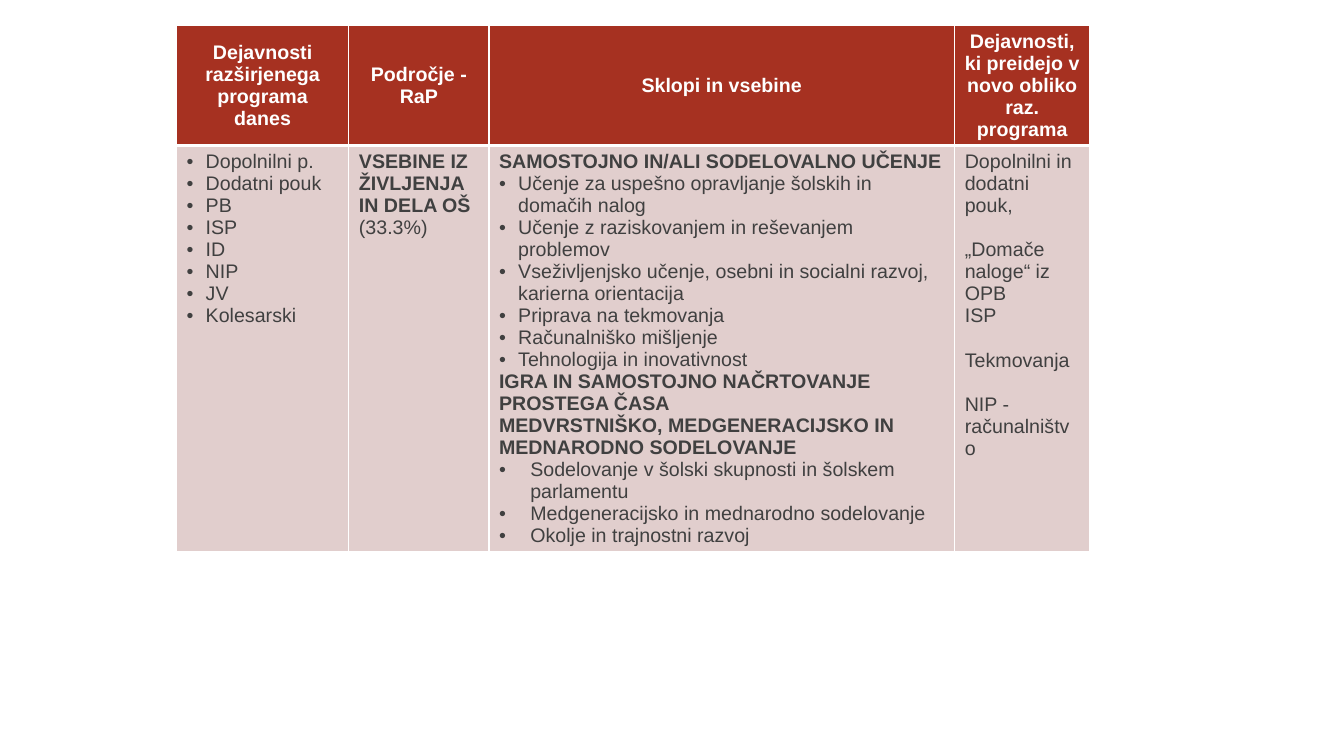
"""Build a slide with a table of extended school programme activities."""
from dataclasses import dataclass

from lxml import etree
from pptx import Presentation
from pptx.dml.color import RGBColor
from pptx.enum.text import MSO_ANCHOR, PP_ALIGN
from pptx.oxml.ns import qn
from pptx.util import Pt

CENTER, LEFT = PP_ALIGN.CENTER, PP_ALIGN.LEFT
MIDDLE, TOP = MSO_ANCHOR.MIDDLE, MSO_ANCHOR.TOP
EMU_PER_PX = 9144
SLIDE_SIZE = (1333, 750)
TABLE_ORIGIN = (175, 25)
COLUMN_WIDTHS = (171, 139, 462, 134)
ROW_HEIGHTS = (119, 402)
FONT_NAME, FONT_SIZE = "Arial", 14
GROUP_GAP = 16
THIN, THICK = 1, 3
COLORS = {"header": "A63121", "body": "E1CECD", "text": "404040", "white": "FFFFFF"}


@dataclass(frozen=True)
class Line:
    text: str
    bold: bool = False
    indent: int = 0
    gap: int = 0


@dataclass(frozen=True)
class RowStyle:
    fill: str
    color: str
    alignment: PP_ALIGN
    anchor: MSO_ANCHOR
    top_border: int
    bottom_border: int


HEADER_STYLE = RowStyle("header", "white", CENTER, MIDDLE, THIN, THICK)
BODY_STYLE = RowStyle("body", "text", LEFT, TOP, THICK, THIN)


def px(length: int) -> int:
    """Turn px into EMU."""
    return length * EMU_PER_PX


def bullets(indent: int, *texts: str) -> list[Line]:
    """Make bulleted lines that share one hanging indent."""
    return [Line(text, indent=indent) for text in texts]


HEADERS = [
    [Line(text, bold=True)]
    for text in (
        "Dejavnosti razširjenega programa danes",
        "Področje - RaP",
        "Sklopi in vsebine",
        "Dejavnosti, ki preidejo v novo obliko raz. programa",
    )
]
BODY = [
    bullets(19, "Dopolnilni p.", "Dodatni pouk", "PB", "ISP", "ID", "NIP", "JV", "Kolesarski"),
    [Line("VSEBINE IZ ŽIVLJENJA IN DELA OŠ", bold=True), Line("(33.3%)")],
    [
        Line("SAMOSTOJNO IN/ALI SODELOVALNO UČENJE", bold=True),
        *bullets(
            19,
            "Učenje za uspešno opravljanje šolskih in domačih nalog",
            "Učenje z raziskovanjem in reševanjem problemov",
            "Vseživljenjsko učenje, osebni in socialni razvoj, karierna orientacija",
            "Priprava na tekmovanja",
            "Računalniško mišljenje",
            "Tehnologija in inovativnost",
        ),
        Line("IGRA IN SAMOSTOJNO NAČRTOVANJE PROSTEGA ČASA", bold=True),
        Line("MEDVRSTNIŠKO, MEDGENERACIJSKO IN MEDNARODNO SODELOVANJE", bold=True),
        *bullets(
            31,
            "Sodelovanje v šolski skupnosti in šolskem parlamentu",
            "Medgeneracijsko in mednarodno sodelovanje",
            "Okolje in trajnostni razvoj",
        ),
    ],
    [
        Line("Dopolnilni in dodatni pouk,"),
        Line("„Domače naloge“ iz OPB", gap=GROUP_GAP),
        Line("ISP"),
        Line("Tekmovanja", gap=GROUP_GAP),
        Line("NIP - računalništvo", gap=GROUP_GAP),
    ],
]


def add_bullet(paragraph, indent: int) -> None:
    """Give a paragraph a round bullet with a hanging indent."""
    properties = paragraph._p.get_or_add_pPr()
    properties.set("marL", str(px(indent)))
    properties.set("indent", str(-px(indent)))
    etree.SubElement(properties, qn("a:buFont"), typeface=FONT_NAME)
    etree.SubElement(properties, qn("a:buChar"), char="•")


def add_borders(cell, style: RowStyle) -> None:
    """Draw white borders on the four sides of a cell."""
    properties = cell._tc.get_or_add_tcPr()
    widths = {"lnL": THIN, "lnR": THIN, "lnT": style.top_border, "lnB": style.bottom_border}
    for side, width in widths.items():
        border = etree.SubElement(properties, qn(f"a:{side}"), w=str(int(Pt(width))))
        fill = etree.SubElement(border, qn("a:solidFill"))
        etree.SubElement(fill, qn("a:srgbClr"), val=COLORS["white"])


def write_line(paragraph, line: Line, style: RowStyle) -> None:
    """Write and format one paragraph."""
    paragraph.text = line.text
    paragraph.alignment = style.alignment
    if line.gap:
        paragraph.space_before = Pt(line.gap)
    if line.indent:
        add_bullet(paragraph, line.indent)
    font = paragraph.font
    font.name, font.size, font.bold = FONT_NAME, Pt(FONT_SIZE), line.bold
    font.color.rgb = RGBColor.from_string(COLORS[style.color])


def fill_cell(cell, lines: list[Line], style: RowStyle) -> None:
    """Format a cell and write its lines."""
    add_borders(cell, style)
    cell.fill.solid()
    cell.fill.fore_color.rgb = RGBColor.from_string(COLORS[style.fill])
    cell.vertical_anchor = style.anchor
    frame = cell.text_frame
    for index, line in enumerate(lines):
        paragraph = frame.add_paragraph() if index else frame.paragraphs[0]
        write_line(paragraph, line, style)


def add_programme_table(slide) -> None:
    """Add the table of activities."""
    left, top = TABLE_ORIGIN
    table = slide.shapes.add_table(
        len(ROW_HEIGHTS), len(COLUMN_WIDTHS),
        px(left), px(top), px(sum(COLUMN_WIDTHS)), px(sum(ROW_HEIGHTS)),
    ).table
    table.horz_banding = False
    for column, width in zip(table.columns, COLUMN_WIDTHS):
        column.width = px(width)
    contents = ((HEADERS, HEADER_STYLE), (BODY, BODY_STYLE))
    for row, height, (cells, style) in zip(table.rows, ROW_HEIGHTS, contents):
        row.height = px(height)
        for cell, lines in zip(row.cells, cells):
            fill_cell(cell, lines, style)


def main() -> None:
    """Build and save the presentation."""
    presentation = Presentation()
    presentation.slide_width, presentation.slide_height = map(px, SLIDE_SIZE)
    slide = presentation.slides.add_slide(presentation.slide_layouts[6])
    add_programme_table(slide)
    presentation.save("out.pptx")


if __name__ == "__main__":
    main()
